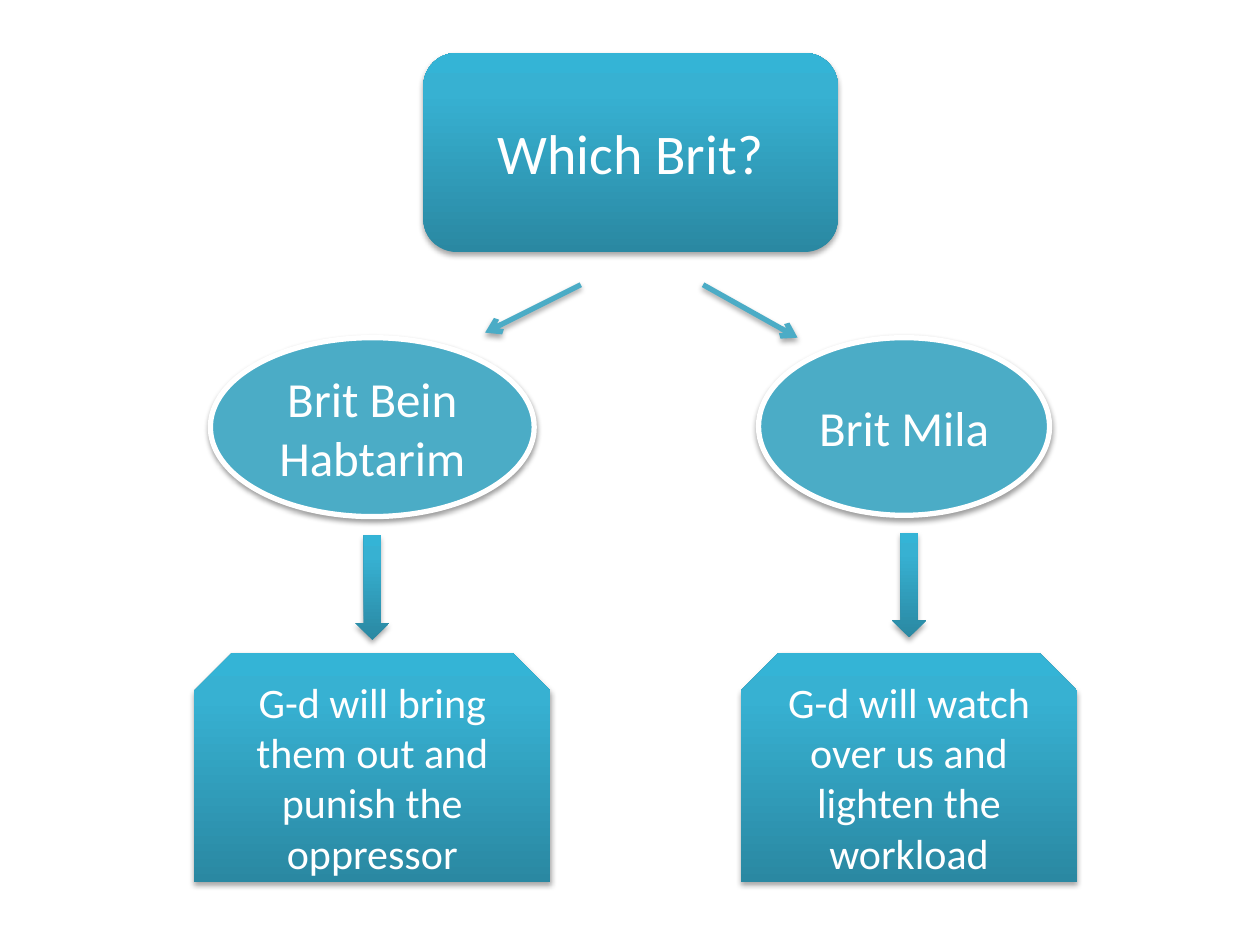
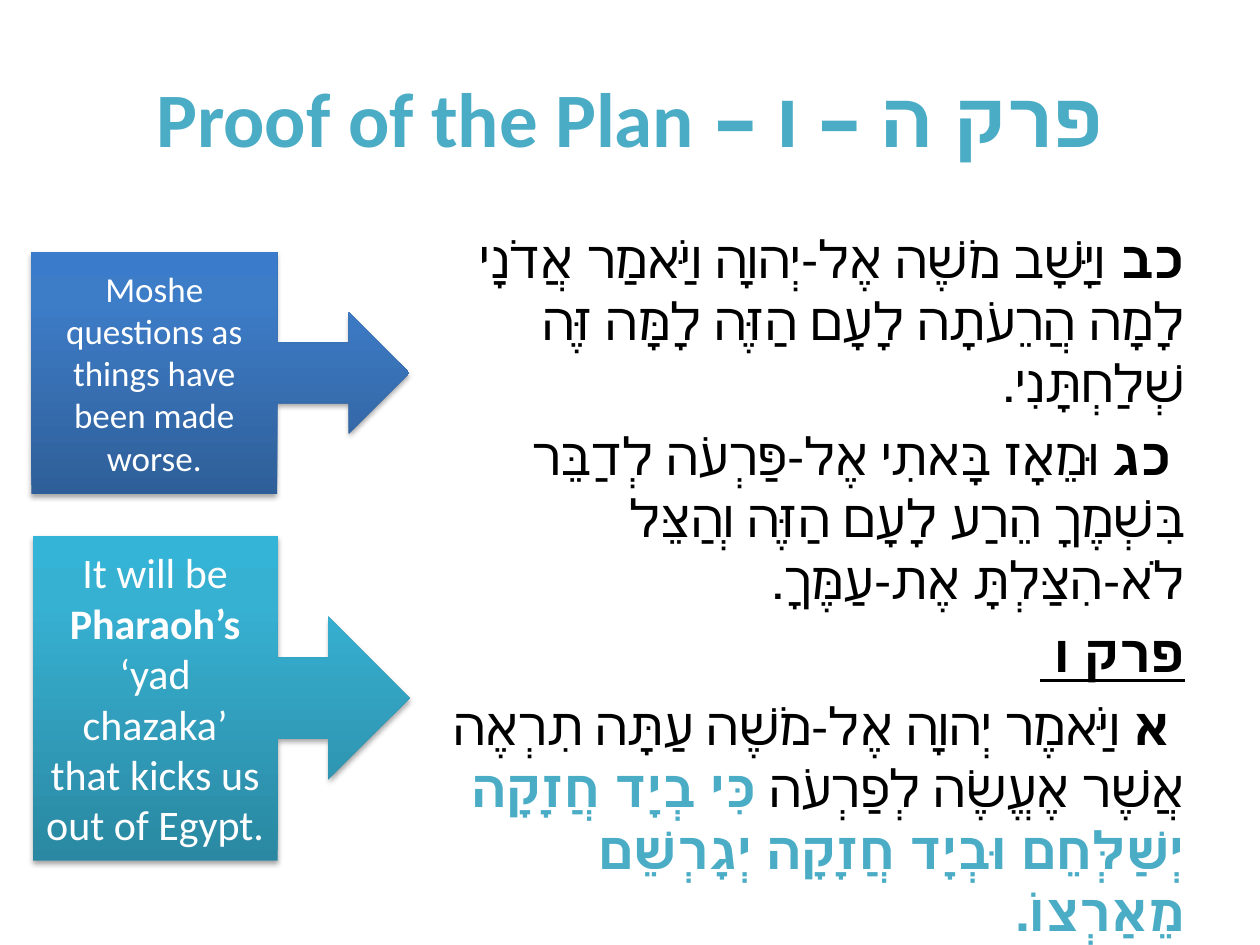
from typing import NamedTuple

from lxml.etree import SubElement
from pptx import Presentation
from pptx.dml.color import RGBColor
from pptx.enum.shapes import MSO_CONNECTOR as Link, MSO_SHAPE as Kind
from pptx.enum.text import MSO_ANCHOR as Anchor, PP_ALIGN as Align
from pptx.oxml.ns import qn
from pptx.util import Pt

PX = 9144  # EMU in one px, 100 px to the inch
FONT = "Calibri"
HUES = {"teal": "4BACC6", "white": "FFFFFF", "black": "000000"}
FADES = {
    "teal": {0: "2A88A2", 80: "37B1D2", 100: "34B4D6"},
    "blue": {0: "2F5F99", 80: "3D7CC7", 100: "3A7CCB"},
}
VOWELS = range(0x5B0, 0x5BC)  # Hebrew vowel signs
DOTS = (0x5BC, 0x5C1, 0x5C2)  # dagesh, shin dot, sin dot


class Span(NamedTuple):
    text: str
    bold: bool = False
    under: bool = False
    hue: str = "black"


class Node(NamedTuple):
    kind: Kind
    box: tuple[int, int, int, int]
    spans: tuple[Span, ...] = ()
    size: int = 24
    fade: str = "teal"


class Arrow(NamedTuple):
    start: tuple[int, int]
    end: tuple[int, int]


def white(text: str, bold: bool = False) -> Span:
    return Span(text, bold, hue="white")


NODES = (
    Node(Kind.ROUNDED_RECTANGLE, (336, 42, 329, 158), (white("Which Brit?"),), 32),
    Node(Kind.OVAL, (167, 268, 257, 142), (white("Brit Bein Habtarim"),), 28),
    Node(Kind.OVAL, (602, 268, 231, 141), (white("Brit Mila"),), 28),
    Node(Kind.SNIP_2_SAME_RECTANGLE, (154, 518, 283, 182),
         (white("G-d will bring them out and punish the oppressor"),)),
    Node(Kind.SNIP_2_SAME_RECTANGLE, (588, 518, 267, 182),
         (white("G-d will watch over us and lighten the workload"),)),
    Node(Kind.DOWN_ARROW, (282, 425, 27, 83)),
    Node(Kind.DOWN_ARROW, (708, 423, 27, 83)),
)
ARROWS = (Arrow((461, 226), (385, 264)), Arrow((558, 226), (633, 268)))

TITLE = Span("פרק ה – ו – Proof of the Plan", True, hue="teal")
VERSES = (
    (Span("כב ", True),
     Span("וַיָּשָׁב מֹשֶׁה אֶל-יְהוָה וַיֹּאמַר אֲדֹנָי לָמָה הֲרֵעֹתָה לָעָם הַזֶּה "
          "לָמָּה זֶּה שְׁלַחְתָּנִי.")),
    (Span(" "), Span("כג", True),
     Span(" וּמֵאָז בָּאתִי אֶל-פַּרְעֹה לְדַבֵּר בִּשְׁמֶךָ הֵרַע לָעָם הַזֶּה "
          "וְהַצֵּל לֹא-הִצַּלְתָּ אֶת-עַמֶּךָ.")),
    (Span("פרק ו ", True, True),),
    (Span(" א", True),
     Span(" וַיֹּאמֶר יְהוָה אֶל-מֹשֶׁה עַתָּה תִרְאֶה אֲשֶׁר אֶעֱשֶׂה לְפַרְעֹה "),
     Span("כִּי בְיָד חֲזָקָה יְשַׁלְּחֵם וּבְיָד חֲזָקָה יְגָרְשֵׁם מֵאַרְצוֹ.",
          True, hue="teal")),
)
NOTES = (
    Node(Kind.RIGHT_ARROW_CALLOUT, (25, 200, 300, 192),
         (white("Moshe questions as things have been made worse."),), 20, "blue"),
    Node(Kind.RIGHT_ARROW_CALLOUT, (26, 425, 299, 258),
         (white("It will be "), white("Pharaoh’s", True),
          white(" ‘yad chazaka’ that kicks us out of Egypt."))),
)


def emu(*lens: int) -> list[int]:
    return [n * PX for n in lens]


def rgb(hue: str) -> RGBColor:
    return RGBColor.from_string(HUES[hue])


def point(text: str) -> str:
    """Put each Hebrew dot ahead of the vowel on the same letter."""
    out = ""
    for sign in text:
        if ord(sign) in DOTS and out and ord(out[-1]) in VOWELS:
            out = out[:-1] + sign + out[-1]
        else:
            out += sign
    return out


def write(para, spans: tuple[Span, ...], size: float, align: Align,
          rtl: bool = False) -> None:
    """Fill a paragraph with spans; what they share goes on the paragraph."""
    para.alignment = align
    if rtl:
        para._p.get_or_add_pPr().set("rtl", "1")
    para.font.name, para.font.size = FONT, Pt(size)
    hues = {span.hue for span in spans}
    if len(hues) == 1:
        para.font.color.rgb = rgb(spans[0].hue)
    for span in spans:
        run = para.add_run()
        run.text = point(span.text)
        run.font.bold = span.bold
        if span.under:
            run.font.underline = True
        if len(hues) > 1:
            run.font.color.rgb = rgb(span.hue)


def shade(shape, dist: int = 23000, alpha: int = 35) -> None:
    """Drop a soft shadow straight down."""
    fx = SubElement(shape._element.spPr, qn("a:effectLst"))
    drop = SubElement(fx, qn("a:outerShdw"), blurRad="40000", dist=str(dist),
                      dir="5400000", rotWithShape="0")
    tint = SubElement(drop, qn("a:srgbClr"), val=HUES["black"])
    SubElement(tint, qn("a:alpha"), val=str(alpha * 1000))


def blend(shape, fade: str) -> None:
    """Fill with a three-stop gradient that runs from bottom to top."""
    shape.fill.gradient()
    shape.fill.gradient_angle = 90
    stops = shape._element.spPr.find(".//" + qn("a:gsLst"))
    for stop in list(stops):
        stops.remove(stop)
    for pos, tint in FADES[fade].items():
        stop = SubElement(stops, qn("a:gs"), pos=str(pos * 1000))
        SubElement(stop, qn("a:srgbClr"), val=tint)


def draw(slide, node: Node) -> None:
    shape = slide.shapes.add_shape(node.kind, *emu(*node.box))
    if node.kind == Kind.OVAL:
        shape.fill.solid()
        shape.fill.fore_color.rgb = rgb("teal")
        shape.line.color.rgb = rgb("white")
        shape.line.width = Pt(3)
        shade(shape, 20000, 38)
    else:
        blend(shape, node.fade)
        shape.line.fill.background()
        shade(shape)
    if node.spans:
        frame = shape.text_frame
        frame.vertical_anchor = Anchor.MIDDLE
        write(frame.paragraphs[0], node.spans, node.size, Align.CENTER)


def link(slide, arrow: Arrow) -> None:
    line = slide.shapes.add_connector(Link.STRAIGHT, *emu(*arrow.start, *arrow.end))
    line.line.color.rgb = rgb("teal")
    line.line.width = Pt(3)
    SubElement(line.line._get_or_add_ln(), qn("a:tailEnd"), type="arrow")
    shade(line)


def chart_brit(deck) -> None:
    slide = deck.slides.add_slide(deck.slide_layouts[6])
    for node in NODES:
        draw(slide, node)
    for arrow in ARROWS:
        link(slide, arrow)


def show_proof(deck) -> None:
    slide = deck.slides.add_slide(deck.slide_layouts[5])
    title = slide.shapes.title
    title.left, title.top, title.width, title.height = emu(50, 30, 900, 125)
    title.text_frame.vertical_anchor = Anchor.MIDDLE
    write(title.text_frame.paragraphs[0], (TITLE,), 44, Align.CENTER, True)

    frame = slide.shapes.add_textbox(*emu(342, 175, 608, 495)).text_frame
    frame.word_wrap = True
    for i, verse in enumerate(VERSES):
        para = frame.add_paragraph() if i else frame.paragraphs[0]
        para.space_before = Pt(6)
        write(para, verse, 29.6, Align.RIGHT, True)
    for note in NOTES:
        draw(slide, note)


def main() -> None:
    deck = Presentation()
    deck.slide_width, deck.slide_height = emu(1000, 750)
    chart_brit(deck)
    show_proof(deck)
    deck.save("out.pptx")


if __name__ == "__main__":
    main()
